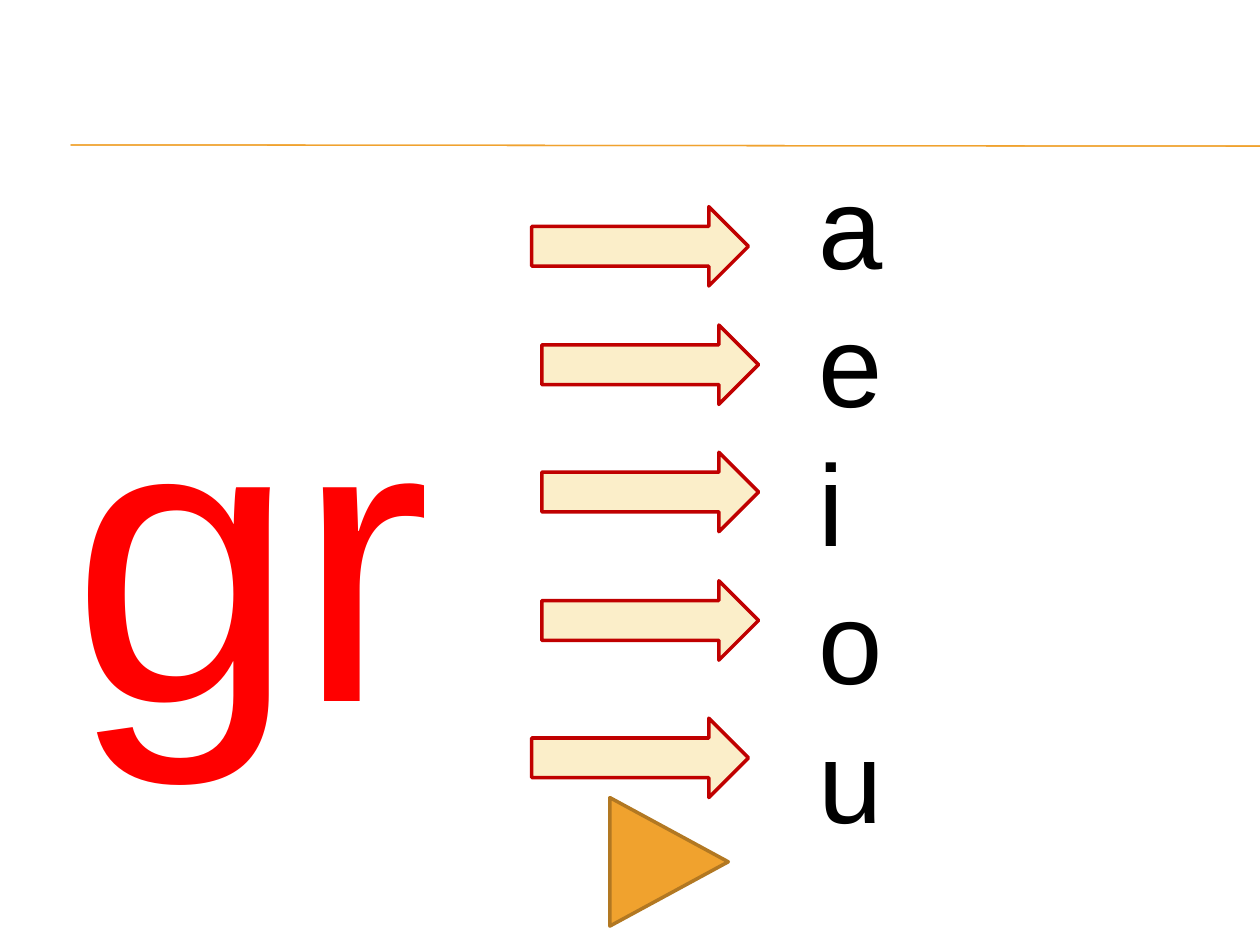
"""Build a slide that joins the consonants "gr" to each of the five vowels."""
import pptx
import pptx.dml.color
import pptx.enum.shapes
import pptx.util
import lxml.etree

deck = pptx.Presentation()
deck.slide_width = pptx.util.Inches(10)
deck.slide_height = pptx.util.Inches(7.5)
page = deck.slides.add_slide(deck.slide_layouts[6])
column = deck.slide_width / 10
row = deck.slide_height / 7.5
kinds = pptx.enum.shapes.MSO_SHAPE


def paint(color_format, color):
    color_format.rgb = pptx.dml.color.RGBColor.from_string(color)


def place(left, top, width, height, kind=None, fill=None, line=None):
    frame = [int(left * column), int(top * row), int(width * column), int(height * row)]
    if kind is None:
        box = page.shapes.add_textbox(*frame)
        box.text_frame.word_wrap = True
        return box
    shape = page.shapes.add_shape(kind, *frame)
    shape.shadow.inherit = False
    shape.fill.solid()
    paint(shape.fill.fore_color, fill)
    paint(shape.line.color, line)
    shape.line.width = pptx.util.Pt(2)
    return shape


for rule_number in range(2):
    rule = page.shapes.add_connector(
        pptx.enum.shapes.MSO_CONNECTOR.STRAIGHT,
        int(0.56 * column), int(1.15 * row), deck.slide_width, int(1.16 * row))
    paint(rule.line.color, "F0A22E")
    rule.line.width = pptx.util.Pt(0.75)
    properties = rule._element.spPr
    lxml.etree.SubElement(properties, pptx.oxml.ns.qn("a:effectLst"))

consonants = place(0.47, 1.17, 3.49, 5.16)
vowels = place(6.4, 1.17, 1.88, 5.65)
for box, lines, size, color, inset in (
    (consonants, "gr", 231.2, "FF0000", 1.19),
    (vowels, "a\ne\ni\no\nu", 66, "000000", 0.05),
):
    box.text_frame.margin_top = int(inset * row)
    box.text_frame.margin_bottom = 0
    box.text_frame.text = lines
    for para in box.text_frame.paragraphs:
        para.font.name = "Arial"
        para.font.size = pptx.util.Pt(size)
        paint(para.font.color, color)

for left, top in ((4.22, 1.64), (4.3, 2.58), (4.3, 3.59), (4.3, 4.61), (4.22, 5.7)):
    place(left, top, 1.72, 0.63, kinds.RIGHT_ARROW, "FBEEC9", "C00000")

triangle = place(4.8, 6.37, 1.02, 0.94, kinds.ISOSCELES_TRIANGLE, "F0A22E", "B27822")
triangle.rotation = 90

deck.save("out.pptx")
